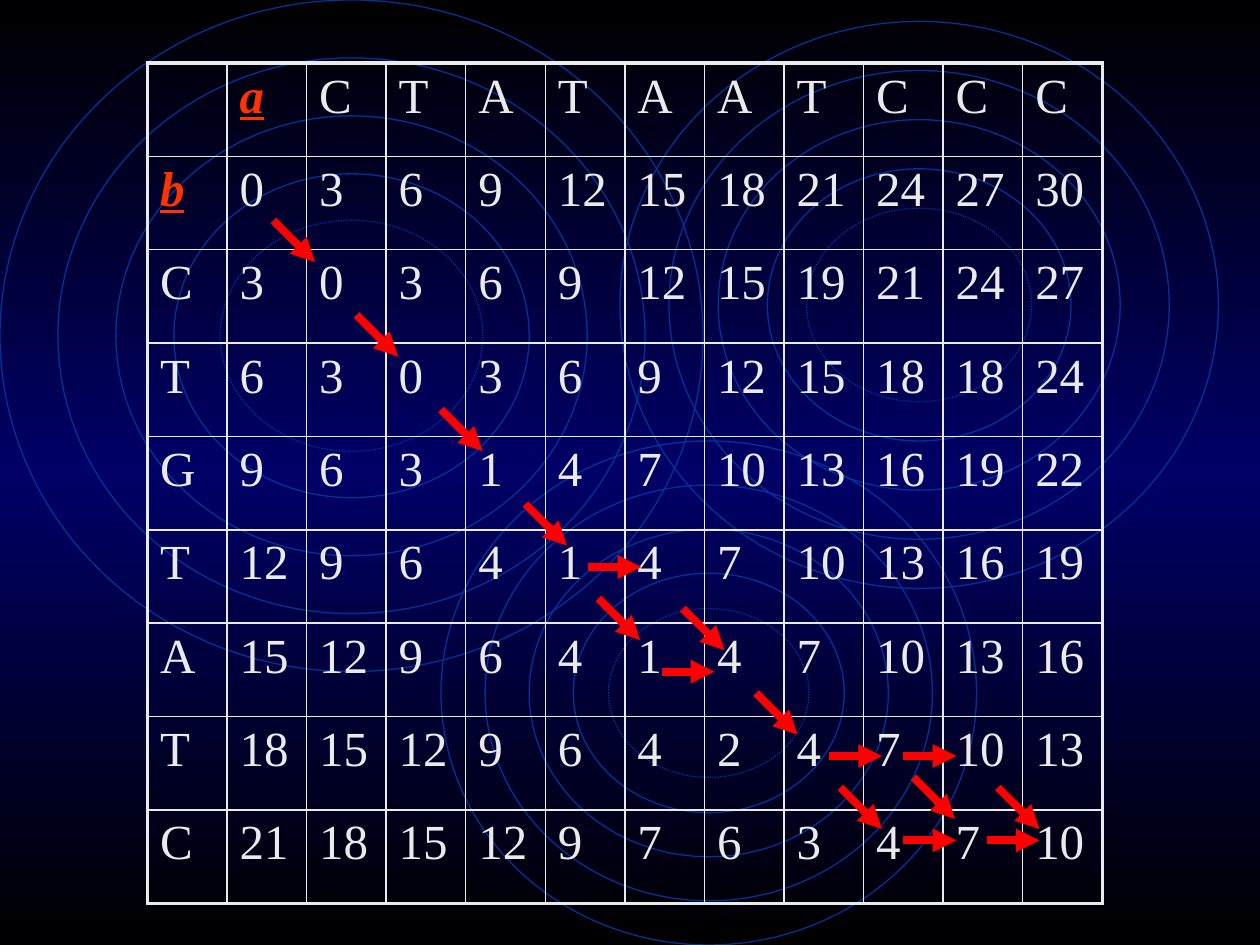
from copy import deepcopy

from lxml import etree
from pptx import Presentation
from pptx.dml.color import RGBColor
from pptx.enum.dml import MSO_LINE
from pptx.enum.shapes import MSO_CONNECTOR, MSO_SHAPE
from pptx.oxml.ns import qn
from pptx.util import Inches, Pt

ELLIPSE = MSO_SHAPE.OVAL
STRAIGHT = MSO_CONNECTOR.STRAIGHT
DOTTED = MSO_LINE.ROUND_DOT

COLORS = {
    "black": "000000",
    "navy": "000066",
    "ring": "003399",
    "text": "EAEAEA",
    "label": "FF3300",
    "arrow": "FF0000",
}
FONT = "Times New Roman"
PLAIN = {"name": FONT, "size": Pt(28), "bold": False, "italic": False, "underline": False}
LABEL = {**PLAIN, "bold": True, "italic": True, "underline": True}

# Alignment matrix: a runs across, b runs down
MATRIX = [
    ["", "a", *"CTATAATCCC"],
    ["b", 0, 3, 6, 9, 12, 15, 18, 21, 24, 27, 30],
    ["C", 3, 0, 3, 6, 9, 12, 15, 19, 21, 24, 27],
    ["T", 6, 3, 0, 3, 6, 9, 12, 15, 18, 18, 24],
    ["G", 9, 6, 3, 1, 4, 7, 10, 13, 16, 19, 22],
    ["T", 12, 9, 6, 4, 1, 4, 7, 10, 13, 16, 19],
    ["A", 15, 12, 9, 6, 4, 1, 4, 7, 10, 13, 16],
    ["T", 18, 15, 12, 9, 6, 4, 2, 4, 7, 10, 13],
    ["C", 21, 18, 15, 12, 9, 7, 6, 3, 4, 7, 10],
]

# Outer ellipse (left, top, width, height) and the inset per ring
RING_GROUPS = [
    ((0, 0, 5.58, 5.33), 0.46),
    ((3.5, 3.5, 4.25, 4), 0.35),
    ((4.92, 0.17, 4.75, 4.5), 0.39),
]
RING_STEPS = [0, 1, 2, 3, 3.8]

# Starting points of the traceback arrows
DIAGONAL_STARTS = [
    (2.17, 1.75), (4.75, 4.75), (2.83, 2.5), (3.5, 3.25), (4.17, 4), (6, 5.5),
    (7.25, 6.17), (6.67, 6.25), (5.42, 4.83), (7.92, 6.25),
]
HORIZONTAL_STARTS = [
    (5.25, 5.33), (4.67, 4.5), (7.17, 6), (6.58, 6), (7.83, 6.67), (7.17, 6.67),
]


def rgb(color):
    return RGBColor.from_string(COLORS[color])


class SlideBuilder:
    def __init__(self, slide):
        self.slide = slide

    def background(self, colors):
        fill = self.slide.background.fill
        fill.gradient()
        fill.gradient_angle = 270
        stop_list = self.slide.element.find(".//" + qn("a:gsLst"))
        stop_list.append(deepcopy(stop_list[0]))
        for index, (stop, color) in enumerate(zip(fill.gradient_stops, colors)):
            stop.position = index / (len(colors) - 1)
            stop.color.rgb = rgb(color)

    def rings(self, box, inset):
        left, top, width, height = box
        for step in RING_STEPS:
            gap = inset * step
            shape = self.slide.shapes.add_shape(
                ELLIPSE, Inches(left + gap), Inches(top + gap),
                Inches(width - 2 * gap), Inches(height - 2 * gap))
            shape.shadow.inherit = False
            shape.fill.background()
            shape.line.color.rgb = rgb("ring")
            shape.line.width = Pt(0.75)
            if step == RING_STEPS[-1]:
                shape.line.dash_style = DOTTED

    def border(self, cell, side, width):
        properties = cell._tc.get_or_add_tcPr()
        line = etree.SubElement(properties, qn(f"a:ln{side}"), w=str(Pt(width)))
        fill = etree.SubElement(line, qn("a:solidFill"))
        etree.SubElement(fill, qn("a:srgbClr"), val=COLORS["text"])

    def cell_text(self, cell, text):
        paragraph = cell.text_frame.paragraphs[0]
        spacing = etree.SubElement(paragraph._p.get_or_add_pPr(), qn("a:spcBef"))
        etree.SubElement(spacing, qn("a:spcPct"), val="20000")
        run = paragraph.add_run()
        run.text = text
        is_label = text in ("a", "b")
        for name, value in (LABEL if is_label else PLAIN).items():
            setattr(run.font, name, value)
        run.font.color.rgb = rgb("label" if is_label else "text")

    def matrix(self, rows, left, top, width, height):
        row_count, column_count = len(rows), len(rows[0])
        table = self.slide.shapes.add_table(
            row_count, column_count, Inches(left), Inches(top),
            Inches(width), Inches(height)).table
        table.first_row = table.horz_banding = False
        for row, values in enumerate(rows):
            for column, value in enumerate(values):
                cell = table.cell(row, column)
                outer_sides = {
                    "L": column == 0, "R": column == column_count - 1,
                    "T": row == 0, "B": row == row_count - 1,
                }
                for side, is_outer in outer_sides.items():
                    self.border(cell, side, 2.25 if is_outer else 1)
                cell.fill.background()
                if value != "":
                    self.cell_text(cell, str(value))

    def arrow(self, start, run, drop):
        x, y = start
        connector = self.slide.shapes.add_connector(
            STRAIGHT, Inches(x), Inches(y), Inches(x + run), Inches(y + drop))
        connector.line.color.rgb = rgb("arrow")
        connector.line.width = Pt(4.5)
        properties = connector.element.spPr
        etree.SubElement(properties.find(qn("a:ln")), qn("a:tailEnd"), type="triangle")
        etree.SubElement(properties, qn("a:effectLst"))


def main():
    presentation = Presentation()
    presentation.slide_width = Inches(10)
    presentation.slide_height = Inches(7.5)
    builder = SlideBuilder(presentation.slides.add_slide(presentation.slide_layouts[6]))

    # Backdrop
    builder.background(["black", "navy", "black"])
    for box, inset in RING_GROUPS:
        builder.rings(box, inset)

    # Matrix and traceback
    builder.matrix(MATRIX, 1.17, 0.5, 7.58, 6.67)
    for start in DIAGONAL_STARTS:
        builder.arrow(start, 0.33, 0.33)
    for start in HORIZONTAL_STARTS:
        builder.arrow(start, 0.42, 0)

    presentation.save("out.pptx")


if __name__ == "__main__":
    main()
